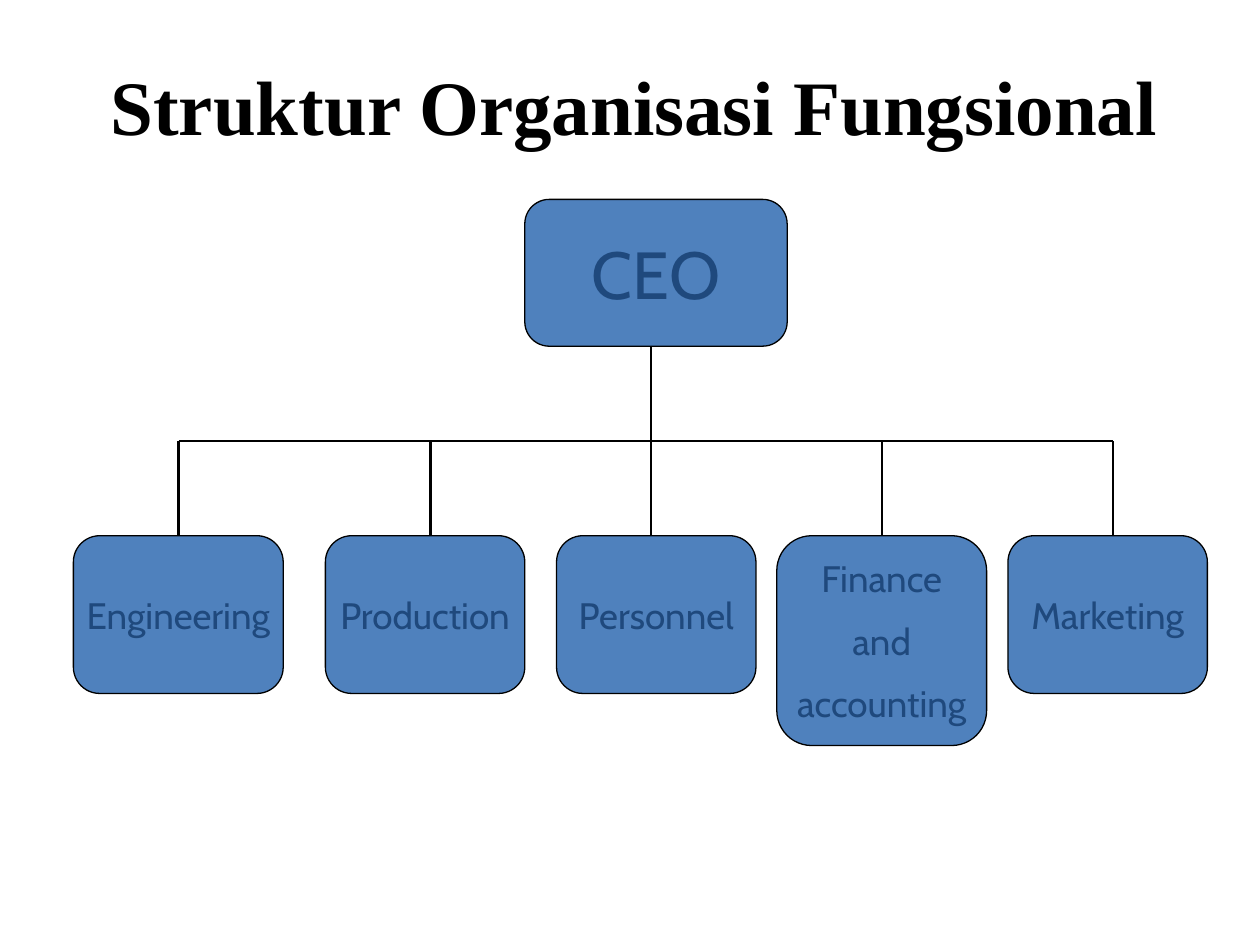
from lxml.etree import SubElement
from pptx import Presentation
from pptx.dml.color import RGBColor
from pptx.enum.shapes import MSO_CONNECTOR as Link, MSO_SHAPE as Kind
from pptx.enum.text import MSO_ANCHOR as Anchor, PP_ALIGN as Align
from pptx.oxml.ns import qn
from pptx.util import Cm, Pt

TITLE = "Struktur Organisasi Fungsional"
CHIEF = ("CEO", 10.58, 4.02, 5.29, 2.96)
UNITS = [
    ("Engineering", 1.48, 4.23, 3.18, 3.6),
    ("Production", 6.56, 4.02, 3.18, 8.68),
    ("Personnel", 11.22, 4.02, 3.18, 13.12),
    ("Finance\nand\naccounting", 15.66, 4.23, 4.23, 17.78),
    ("Marketing", 20.32, 4.02, 3.18, 22.44),
]
STEM, BUS, ROW = 13.12, 8.89, 10.8
BLUE, NAVY, BLACK = "4F81BD", "1F497D", "000000"


def color(code):
    return RGBColor.from_string(code)


def write(shape, text, size=21, font="Cabin", ink=NAVY, bold=False, wrap=False):
    frame = shape.text_frame
    frame.word_wrap = wrap
    frame.vertical_anchor = Anchor.MIDDLE
    for i, line in enumerate(text.split("\n")):
        para = frame.add_paragraph() if i else frame.paragraphs[0]
        para.alignment = Align.CENTER
        if i:
            para.space_before = Pt(size / 2)
        run = para.add_run()
        run.text = line
        run.font.name = font
        run.font.size = Pt(size)
        run.font.bold = bold
        run.font.color.rgb = color(ink)


def add_box(slide, text, left, top, width, height, size=21):
    box = slide.shapes.add_shape(
        Kind.FLOWCHART_ALTERNATE_PROCESS, Cm(left), Cm(top), Cm(width), Cm(height))
    box.shadow.inherit = False
    box.fill.solid()
    box.fill.fore_color.rgb = color(BLUE)
    box.line.color.rgb = color(BLACK)
    box.line.width = Pt(0.75)
    write(box, text, size=size)


def add_line(slide, x1, y1, x2, y2):
    line = slide.shapes.add_connector(Link.STRAIGHT, Cm(x1), Cm(y1), Cm(x2), Cm(y2))
    line.line.color.rgb = color(BLACK)
    line.line.width = Pt(1.5)
    SubElement(line._element.spPr, qn("a:effectLst"))


def main():
    deck = Presentation()
    deck.slide_width, deck.slide_height = Cm(25.4), Cm(19.05)
    slide = deck.slides.add_slide(deck.slide_layouts[6])

    title = slide.shapes.add_textbox(Cm(1.45), Cm(0.28), Cm(22.68), Cm(3.66))
    write(title, TITLE, size=44, font="Times New Roman", ink=BLACK, bold=True, wrap=True)

    name, left, top, width, height = CHIEF
    add_line(slide, STEM, top + height, STEM, BUS)
    add_line(slide, UNITS[0][-1], BUS, UNITS[-1][-1], BUS)
    add_box(slide, name, left, top, width, height, size=38)

    for name, left, width, height, drop in UNITS:
        add_line(slide, drop, BUS, drop, ROW)
        add_box(slide, name, left, ROW, width, height)

    deck.save("out.pptx")


if __name__ == "__main__":
    main()
